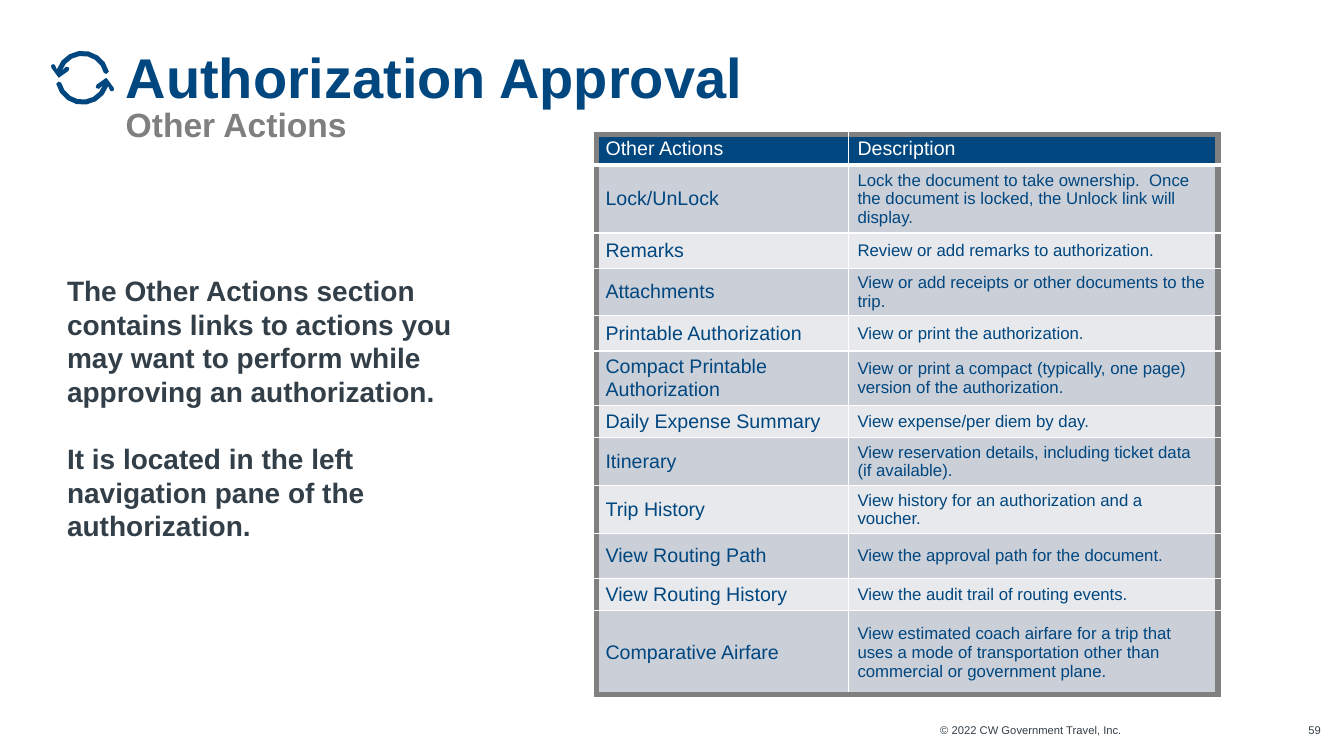
from math import cos, radians, sin

from lxml.etree import SubElement
from pptx import Presentation
from pptx.dml.color import RGBColor
from pptx.enum.text import MSO_ANCHOR as Anchor, PP_ALIGN as Align
from pptx.oxml.ns import qn
from pptx.util import Cm, Pt

NAVY = RGBColor(0x00, 0x46, 0x7F)
SLATE = RGBColor(0x33, 0x3F, 0x48)
GRAY = RGBColor(0x7F, 0x7F, 0x7F)
FRAME = RGBColor(0x80, 0x80, 0x80)
WHITE = RGBColor(0xFF, 0xFF, 0xFF)
BAND_DARK = RGBColor(0xCB, 0xCF, 0xD8)
BAND_LIGHT = RGBColor(0xE7, 0xE9, 0xEC)
FONT = "Arial"

COLUMN_WIDTHS = [6.35, 9.32]
# Action, description, row height in cm
ROWS = [
    ("Other Actions", "Description", 0.64),
    ("Lock/UnLock", "Lock the document to take ownership.  Once the document is "
     "locked, the Unlock link will display.", 1.6),
    ("Remarks", "Review or add remarks to authorization.", 0.89),
    ("Attachments", "View or add receipts or other documents to the trip.", 1.14),
    ("Printable Authorization", "View or print the authorization.", 0.89),
    ("Compact Printable Authorization", "View or print a compact (typically, "
     "one page) version of the authorization.", 1.22),
    ("Daily Expense Summary", "View expense/per diem by day.", 0.81),
    ("Itinerary", "View reservation details, including ticket data "
     "(if available).", 1.22),
    ("Trip History", "View history for an authorization and a voucher.", 1.14),
    ("View Routing Path", "View the approval path for the document.", 1.14),
    ("View Routing History", "View the audit trail of routing events.", 0.81),
    ("Comparative Airfare", "View estimated coach airfare for a trip that uses a "
     "mode of transportation other than commercial or government plane.", 2.11),
]
BODY = [
    "The Other Actions section contains links to actions you may want to "
    "perform while approving an authorization.",
    "It is located in the left navigation pane of the authorization.",
]


def add_span(para, text, size, color, bold=False):
    span = para.add_run()
    span.text = text
    span.font.name = FONT
    span.font.size = Pt(size)
    span.font.color.rgb = color
    span.font.bold = bold


def add_frame(page, left, top, width, height, anchor=Anchor.TOP):
    box = page.shapes.add_textbox(Cm(left), Cm(top), Cm(width), Cm(height))
    frame = box.text_frame
    frame.word_wrap = True
    frame.vertical_anchor = anchor
    frame.margin_left = frame.margin_right = 0
    frame.margin_top = frame.margin_bottom = 0
    return frame


def arc(radius, start, stop, steps=7):
    angles = [radians(start + (stop - start) * i / steps) for i in range(steps + 1)]
    return [(radius * cos(a), -radius * sin(a)) for a in angles]


def add_cycle_icon(page, left, top, size):
    """Two curved arrows; the second is the first turned by half a circle."""
    center_x, center_y = left + size / 2, top + size / 2
    unit = size / 2
    outline = [(-0.75, 0), (-0.44, -0.22), (-0.42, -0.32), (-0.52, -0.35)]
    outline += arc(0.69, 161, 13)
    outline += [(0.75, -0.12)]
    outline += arc(0.85, 13, 162)
    outline += [(-0.87, -0.4), (-0.93, -0.43), (-0.99, -0.39), (-0.98, -0.31)]
    for turn in (1, -1):
        points = [(Cm(center_x + turn * x * unit), Cm(center_y + turn * y * unit))
                  for x, y in outline]
        builder = page.shapes.build_freeform(*points[0])
        builder.add_line_segments(points[1:], close=True)
        arrow = builder.convert_to_shape()
        arrow.shadow.inherit = False
        arrow.fill.solid()
        arrow.fill.fore_color.rgb = NAVY
        arrow.line.fill.background()


def add_heading(page, left, top, width, height):
    add_cycle_icon(page, left, top - 0.17, 1.6)
    para = add_frame(page, left + 1.89, top, width - 1.89, height).paragraphs[0]
    para.line_spacing = 0.85
    add_span(para, "Authorization Approval", 40, NAVY, True)
    para.add_line_break()
    add_span(para, "Other Actions", 24, GRAY, True)


def add_body(page, left, top, width, height):
    frame = add_frame(page, left, top, width, height, Anchor.MIDDLE)
    for index, text in enumerate(BODY):
        para = frame.add_paragraph() if index else frame.paragraphs[0]
        if index:
            para.space_before = Pt(24)
        add_span(para, text, 20, SLATE, True)


def set_borders(cell, borders):
    properties = cell._tc.get_or_add_tcPr()
    for side, (color, width) in zip("LRTB", borders):
        line = SubElement(properties, qn(f"a:ln{side}"), w=str(Pt(width)))
        fill = SubElement(line, qn("a:solidFill"))
        SubElement(fill, qn("a:srgbClr"), val=str(color))


def add_actions_table(page, left, top):
    total_height = sum(height for *_, height in ROWS)
    table = page.shapes.add_table(len(ROWS), 2, Cm(left), Cm(top),
                                  Cm(sum(COLUMN_WIDTHS)), Cm(total_height)).table
    for column, width in zip(table.columns, COLUMN_WIDTHS):
        column.width = Cm(width)
    outer, inner, header_rule = (FRAME, 4.5), (WHITE, 1), (WHITE, 3)
    last = len(ROWS) - 1
    for r, (*texts, height) in enumerate(ROWS):
        table.rows[r].height = Cm(height)
        header = r == 0
        above = outer if header else header_rule if r == 1 else inner
        below = header_rule if header else outer if r == last else inner
        for c, text in enumerate(texts):
            cell = table.cell(r, c)
            sides = (inner, outer) if c else (outer, inner)
            set_borders(cell, (*sides, above, below))
            cell.fill.solid()
            cell.fill.fore_color.rgb = (
                NAVY if header else BAND_DARK if r % 2 else BAND_LIGHT)
            cell.vertical_anchor = Anchor.TOP if header else Anchor.MIDDLE
            cell.margin_left = cell.margin_right = Cm(0.23)
            cell.margin_top = cell.margin_bottom = Cm(0.09)
            add_span(cell.text_frame.paragraphs[0], text,
                     12 if c and not header else 14, WHITE if header else NAVY)


def add_footer(page, left, top, width, height):
    number_width = 0.6
    notice_width = width - 5.02
    for text, x, w in (
        ("© 2022 CW Government Travel, Inc.", left, notice_width),
        ("59", left + width - number_width, number_width),
    ):
        para = add_frame(page, x, top, w, height).paragraphs[0]
        para.alignment = Align.RIGHT
        add_span(para, text, 8, SLATE)


def main():
    deck = Presentation()
    deck.slide_width, deck.slide_height = Cm(33.87), Cm(19.05)
    page = deck.slides.add_slide(deck.slide_layouts[6])
    add_heading(page, 1.28, 1.33, 31.18, 2.34)
    add_actions_table(page, 15.03, 3.39)
    add_body(page, 1.69, 6.14, 10.16, 8.28)
    add_footer(page, 21.29, 18.22, 12.0, 0.36)
    deck.save("out.pptx")


if __name__ == "__main__":
    main()
